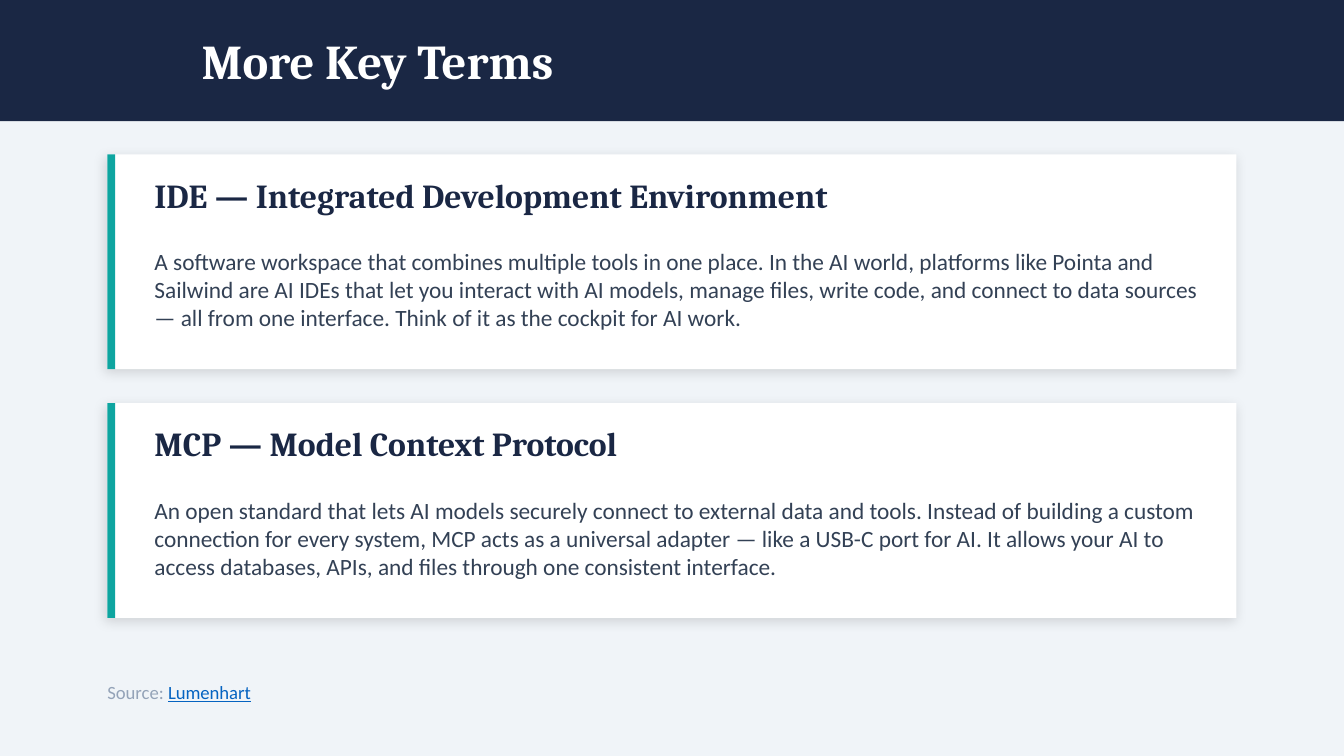
"""Build the "More Key Terms" slide with two definition cards."""
import lxml.etree
import pptx
import pptx.dml.color
import pptx.enum.shapes
import pptx.enum.text
import pptx.oxml
import pptx.util

Cm = pptx.util.Cm
Pt = pptx.util.Pt
NAVY = "1A2744"
LEFT, WIDTH, HEIGHT = 2.03, 21.34, 4.06
TERMS = [
    ("IDE — Integrated Development Environment",
     "A software workspace that combines multiple tools in one place. In the AI world, "
     "platforms like Pointa and Sailwind are AI IDEs that let you interact with AI models, "
     "manage files, write code, and connect to data sources — all from one interface. "
     "Think of it as the cockpit for AI work."),
    ("MCP — Model Context Protocol",
     "An open standard that lets AI models securely connect to external data and tools. "
     "Instead of building a custom connection for every system, MCP acts as a universal "
     "adapter — like a USB-C port for AI. It allows your AI to access databases, APIs, "
     "and files through one consistent interface."),
]
SHADOW = (
    '<a:outerShdw xmlns:a="http://schemas.openxmlformats.org/drawingml/2006/main" '
    'blurRad="76200" dist="25400" dir="8100000" algn="bl" rotWithShape="0">'
    '<a:srgbClr val="000000"><a:alpha val="12000"/></a:srgbClr></a:outerShdw>'
)


def add_box(x, y, w, h, color):
    box = slide.shapes.add_shape(
        pptx.enum.shapes.MSO_SHAPE.RECTANGLE, Cm(x), Cm(y), Cm(w), Cm(h))
    box.shadow.inherit = False
    box.fill.solid()
    box.fill.fore_color.rgb = pptx.dml.color.RGBColor.from_string(color)
    box.line.fill.background()
    return box


def add_text(x, y, w, h, text, size, face, color, bold=False):
    frame = slide.shapes.add_textbox(Cm(x), Cm(y), Cm(w), Cm(h)).text_frame
    frame.word_wrap = True
    frame.vertical_anchor = pptx.enum.text.MSO_ANCHOR.MIDDLE
    frame.margin_left = frame.margin_right = 0
    frame.margin_top = frame.margin_bottom = 0
    frame.text = text
    font = frame.paragraphs[0].runs[0].font
    font.size, font.name, font.bold = Pt(size), face, bold
    font.color.rgb = pptx.dml.color.RGBColor.from_string(color)
    return frame.paragraphs[0]


deck = pptx.Presentation()
deck.slide_width, deck.slide_height = Cm(25.4), Cm(14.29)
slide = deck.slides.add_slide(deck.slide_layouts[6])
slide.background.fill.solid()
slide.background.fill.fore_color.rgb = pptx.dml.color.RGBColor.from_string("F0F4F8")

add_box(0, 0, 25.4, 2.29, NAVY)
add_text(3.81, 0, 20.32, 2.29, "More Key Terms", 26, "Cambria", "FFFFFF", True)

for i, (term, body) in enumerate(TERMS):
    top = 2.92 + i * 4.7
    card = add_box(LEFT, top, WIDTH, HEIGHT, "FFFFFF")
    effects = card._element.spPr.find(pptx.oxml.ns.qn("a:effectLst"))
    effects.append(lxml.etree.fromstring(SHADOW))
    add_box(LEFT, top, 0.15, HEIGHT, "0EA5A0")
    add_text(2.92, top + 0.25, 19.81, 1.02, term, 18, "Cambria", NAVY, True)
    add_text(2.92, top + 1.4, 19.81, 2.29, body, 12.5, "Calibri", "334155")

source = add_text(LEFT, 12.7, WIDTH, 0.76, "Source: ", 10, "Calibri", "94A3B8")
name = source.add_run()
name.text = "Lumenhart"
name.font.size, name.font.name, name.font.underline = Pt(10), "Calibri", True
name.font.color.rgb = pptx.dml.color.RGBColor.from_string("0563C1")

deck.save("out.pptx")
